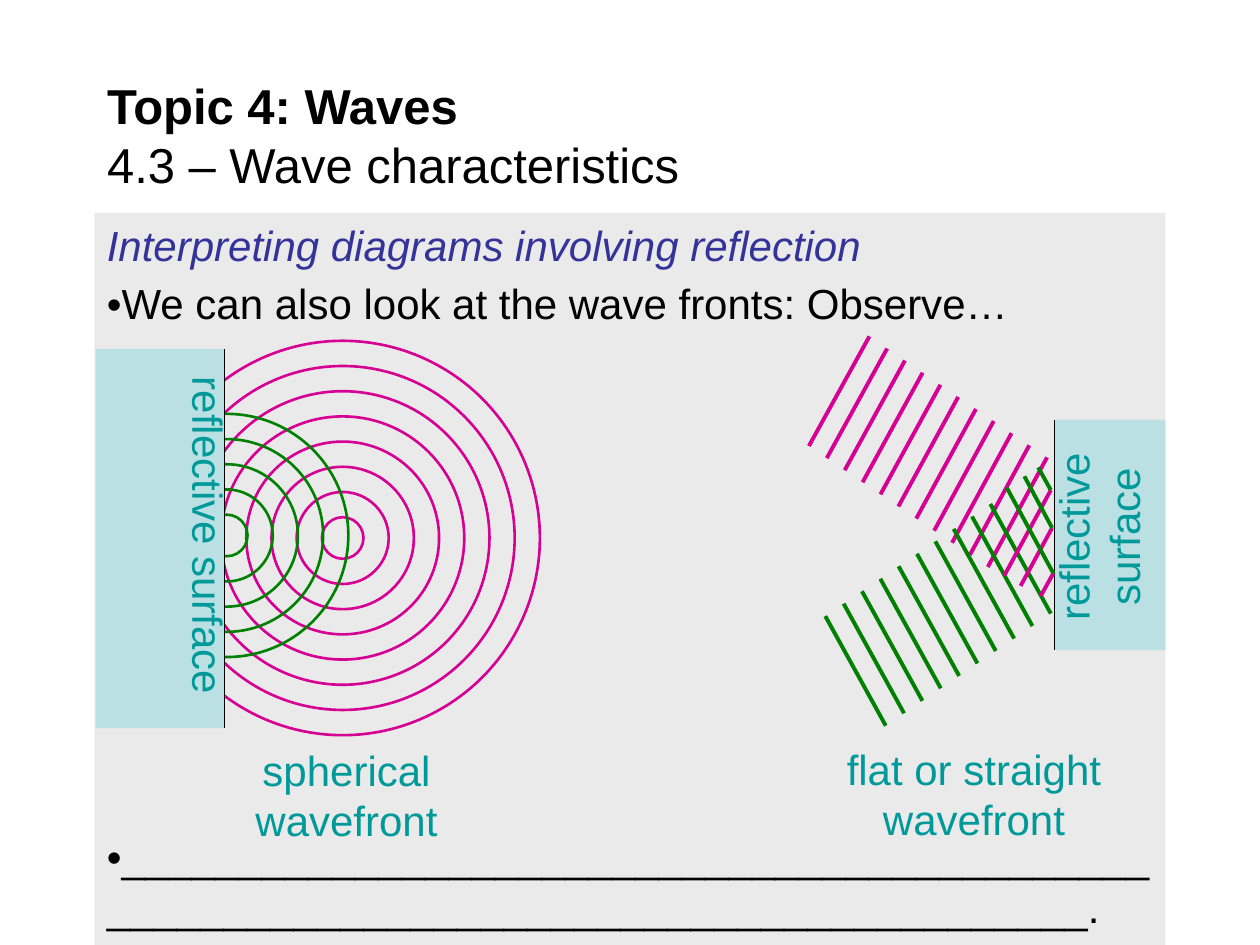
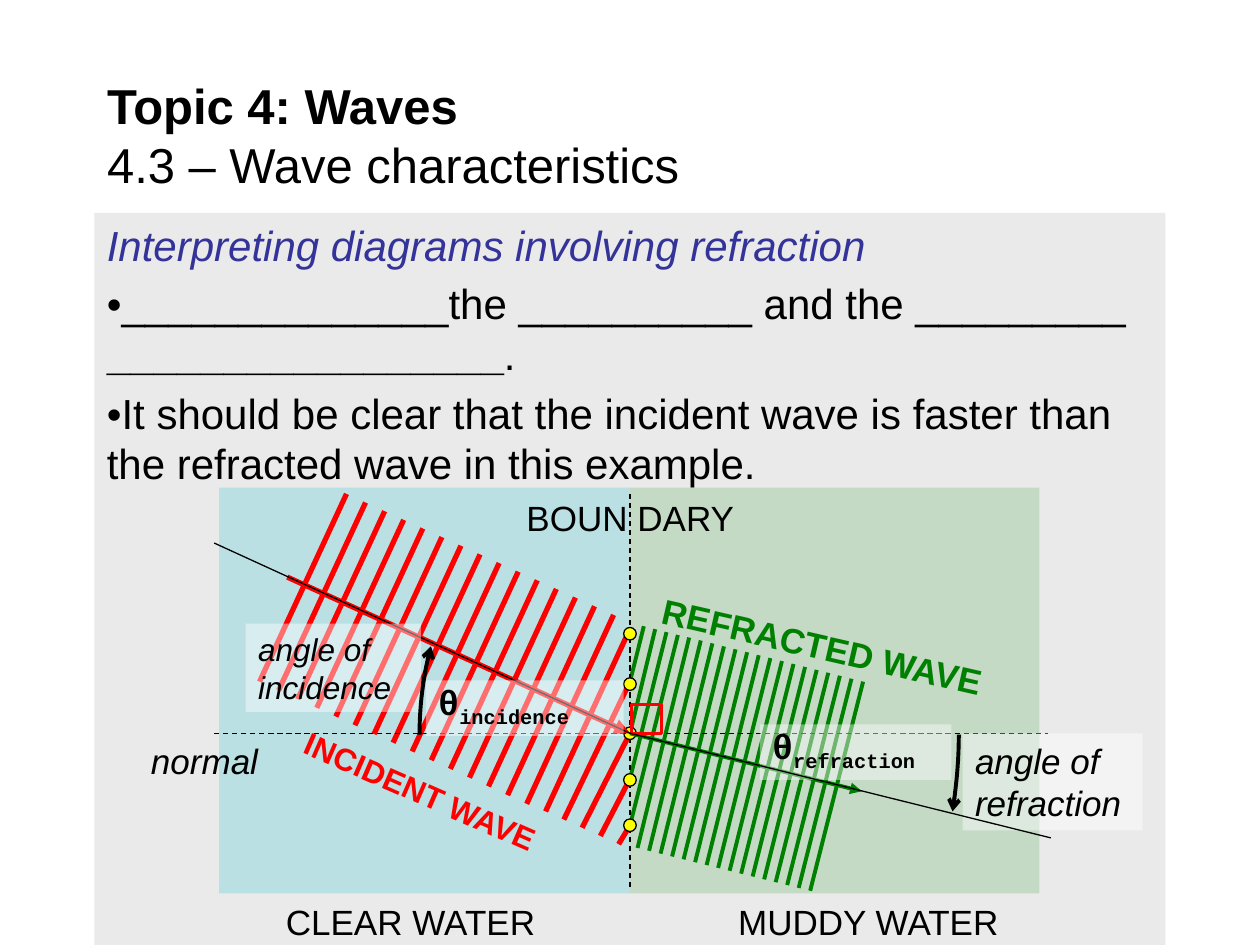
from dataclasses import dataclass, replace

from lxml import etree
from pptx import Presentation
from pptx.dml.color import RGBColor
from pptx.enum.dml import MSO_LINE
from pptx.enum.shapes import MSO_CONNECTOR, MSO_SHAPE
from pptx.enum.text import MSO_ANCHOR, MSO_AUTO_SIZE, PP_ALIGN
from pptx.oxml.ns import qn
from pptx.util import Inches, Pt

WIDE, HIGH = Inches(10), Inches(7.5)
CELL = WIDE // 10  # the grid has 10 columns and 7.5 rows of square cells

BLACK = RGBColor(0, 0, 0)
WHITE = RGBColor(255, 255, 255)
GRAY = RGBColor(0xEA, 0xEA, 0xEA)
NAVY = RGBColor(0x33, 0x33, 0x99)
TEAL = RGBColor(0, 0x99, 0x99)
AQUA = RGBColor(0xBB, 0xE0, 0xE3)
SAGE = RGBColor(0xC4, 0xDA, 0xC5)
PINK = RGBColor(0xD6, 0, 0x93)
GREEN = RGBColor(0, 0x80, 0)
RED = RGBColor(255, 0, 0)
YELLOW = RGBColor(255, 255, 0)

Point = tuple[float, float]
Seg = tuple[Point, Point]
Box = tuple[float, float, float, float]

TITLE: Box = (0.75, 0.58, 8.5, 0.98)
PANEL: Box = (0.75, 1.69, 8.5, 5.81)
LEAD = 1.2
GAP = 4.8


@dataclass(frozen=True)
class Font:
    size: float = 24
    color: RGBColor = BLACK
    bold: bool = False
    italic: bool = False
    name: str = "Arial"
    base: int = 0


@dataclass(frozen=True)
class Pen:
    color: RGBColor = BLACK
    width: float = 0.75
    dash: bool = False
    arrow: bool = False


@dataclass(frozen=True)
class Para:
    spans: tuple[tuple[str, Font], ...]
    before: float = 0


@dataclass(frozen=True)
class Label:
    box: Box
    para: Para
    center: bool = False
    wrap: bool = True
    turn: float = 0
    veil: bool = False


PLAIN = Font()
HEAD = Font(color=NAVY, italic=True)
NOTE = Font(color=TEAL)
CAP = Font(20)
SLANT = Font(20, italic=True)
THETA = Font(20, bold=True, name="Courier New")
SUB = replace(THETA, base=-25)
THIN = Pen()
DASHED = Pen(dash=True)


def line_of(text: str, font: Font, before: float = 0) -> Para:
    return Para(((text, font),), before)


def grid(values) -> list[int]:
    return [round(v * CELL) for v in values]


def style(run, font: Font) -> None:
    face = run.font
    face.name, face.size = font.name, Pt(font.size)
    face.bold, face.italic = font.bold, font.italic
    face.color.rgb = font.color
    if font.base:
        run._r.get_or_add_rPr().set("baseline", str(font.base * 1000))


def write(frame, paras: list[Para], center: bool = False) -> None:
    for n, para in enumerate(paras):
        p = frame.add_paragraph() if n else frame.paragraphs[0]
        p.text = para.spans[0][0]
        for text, _ in para.spans[1:]:
            p.add_run().text = text
        for run, (_, font) in zip(p.runs, para.spans):
            style(run, font)
        p.alignment = PP_ALIGN.CENTER if center else PP_ALIGN.LEFT
        p.space_before = Pt(para.before)
        p.line_spacing = Pt(LEAD * para.spans[0][1].size)


def paint(shape, color: RGBColor, alpha: int = 100) -> None:
    shape.fill.solid()
    shape.fill.fore_color.rgb = color
    if alpha < 100:
        tone = shape.fill._xPr.find(qn("a:solidFill"))[0]
        etree.SubElement(tone, qn("a:alpha")).set("val", str(alpha * 1000))


def ink(shape, pen: Pen, end: str = "tailEnd", kind: str = "triangle") -> None:
    shape.line.color.rgb = pen.color
    shape.line.width = Pt(pen.width)
    if pen.dash:
        shape.line.dash_style = MSO_LINE.DASH
    if pen.arrow:
        tip = etree.SubElement(shape.line._get_or_add_ln(), qn(f"a:{end}"))
        tip.set("type", kind)


def figure(slide, kind, box: Box, fill: RGBColor | None = None,
           pen: Pen | None = None) -> None:
    shape = slide.shapes.add_shape(kind, *grid(box))
    shape.shadow.inherit = False
    if fill is None:
        shape.fill.background()
    else:
        paint(shape, fill)
    if pen is None:
        shape.line.fill.background()
    else:
        ink(shape, pen)


def disc(slide, mid: Point, size: float, pen: Pen,
         fill: RGBColor | None = None) -> None:
    box = (mid[0] - size / 2, mid[1] - size / 2, size, size)
    figure(slide, MSO_SHAPE.OVAL, box, fill, pen)


def stroke(slide, seg: Seg, pen: Pen) -> None:
    wire = slide.shapes.add_connector(
        MSO_CONNECTOR.STRAIGHT, *grid(seg[0] + seg[1]))
    ink(wire, pen)
    etree.SubElement(wire._element.spPr, qn("a:effectLst"))


def mix(a: Point, b: Point, t: float) -> Point:
    return a[0] + (b[0] - a[0]) * t, a[1] + (b[1] - a[1]) * t


def fan(slide, first: Seg, last: Seg, count: int, pen: Pen) -> None:
    """Draw evenly spaced wave fronts from the first to the last."""
    for n in range(count):
        t = n / (count - 1)
        stroke(slide, (mix(first[0], last[0], t), mix(first[1], last[1], t)), pen)


def sweep(slide, curve: tuple[Point, Point, Point, Point], pen: Pen) -> None:
    """Draw a cubic curve with an arrowhead at its first point."""
    steps = 24
    dots = []
    for n in range(steps + 1):
        t = n / steps
        rate = ((1 - t) ** 3, 3 * t * (1 - t) ** 2, 3 * t * t * (1 - t), t ** 3)
        dots.append(grid(sum(r * p[k] for r, p in zip(rate, curve))
                         for k in (0, 1)))
    build = slide.shapes.build_freeform(*dots[0], scale=1.0)
    build.add_line_segments(dots[1:], close=False)
    shape = build.convert_to_shape()
    shape.shadow.inherit = False
    shape.fill.background()
    ink(shape, pen, "headEnd", "arrow")


def tag(slide, label: Label) -> None:
    shape = slide.shapes.add_textbox(*grid(label.box))
    shape.rotation = label.turn
    shape.text_frame.word_wrap = label.wrap
    if label.veil:
        paint(shape, WHITE, 43)
    write(shape.text_frame, [label.para], label.center)


def start(deck, paras: list[Para]):
    """Add a slide with the shared title and gray text panel."""
    slide = deck.slides.add_slide(deck.slide_layouts[5])
    title = slide.shapes.title
    title.left, title.top, title.width, title.height = grid(TITLE)
    frame = title.text_frame
    frame.auto_size = MSO_AUTO_SIZE.NONE
    frame.vertical_anchor = MSO_ANCHOR.MIDDLE
    frame.text = "Topic 4: Waves\v4.3 – Wave characteristics"
    para = frame.paragraphs[0]
    para.alignment = PP_ALIGN.LEFT
    para.line_spacing = Pt(LEAD * 28)
    for run, bold in zip(para.runs, (True, False)):
        style(run, Font(28, bold=bold))
    panel = slide.shapes.add_textbox(*grid(PANEL))
    panel.text_frame.word_wrap = True
    paint(panel, GRAY)
    write(panel.text_frame, paras)
    return slide


def rings(slide, mid: Point, count: int, color: RGBColor) -> None:
    for n in range(count):
        disc(slide, mid, 0.33 + 0.4 * n, Pen(color, 1.5))


def mirror(slide, box: Box, edge: float, label: Label) -> None:
    figure(slide, MSO_SHAPE.RECTANGLE, box, AQUA)
    stroke(slide, ((edge, box[1]), (edge, box[1] + box[3])), THIN)
    tag(slide, label)


def reflect(deck) -> None:
    slide = start(deck, [
        line_of("Interpreting diagrams involving reflection", HEAD),
        line_of("•We can also look at the wave fronts: Observe…", PLAIN, GAP),
        line_of("•" + "_" * 86 + ".", PLAIN, 287),
    ])
    name = line_of("reflective surface", NOTE)
    mirror(slide, (8.37, 3.33, 0.88, 1.83), 8.37,
           Label((7.72, 3.81, 1.99, 0.9), name, center=True, turn=270))
    pink, green = Pen(PINK, 2.25), Pen(GREEN, 2.25)
    fan(slide, ((6.9, 2.67), (6.42, 3.54)), ((8.31, 3.63), (7.84, 4.5)), 11, pink)
    fan(slide, ((6.55, 4.89), (7.03, 5.76)), ((7.86, 4), (8.34, 4.87)), 10, green)
    bends = (
        ((8.24, 3.71), (8.34, 3.89), (7.97, 4.57)),
        ((8.13, 3.78), (8.35, 4.19), (8.1, 4.65)),
        ((7.99, 3.87), (8.36, 4.55), (8.26, 4.73)),
    )
    for top, wall, foot in bends:
        stroke(slide, (wall, foot), pink)
        stroke(slide, (top, wall), green)
    rings(slide, (2.72, 4.27), 8, PINK)
    rings(slide, (1.8, 4.25), 5, GREEN)
    for text, box in (("spherical wavefront", (1.71, 5.86, 2.08, 0.9)),
                      ("flat or straight wavefront", (6.34, 5.85, 2.78, 0.9))):
        tag(slide, Label(box, line_of(text, NOTE), center=True))
    mirror(slide, (0.76, 2.77, 1.02, 3.01), 1.78,
           Label((0.02, 4, 3.28, 0.5), name, center=True, turn=90))


def refract(deck) -> None:
    slide = start(deck, [
        line_of("Interpreting diagrams involving refraction", HEAD),
        Para((("•" + "_" * 14 + "the " + "_" * 10 + " and the " + "_" * 9 + " ",
               PLAIN),
              ("_" * 17, Font(bold=True)), (".", PLAIN)), GAP),
        line_of("•It should be clear that the incident wave is faster than "
                "the refracted wave in this example.", PLAIN, GAP),
    ])
    for left, color in ((4.99, SAGE), (1.74, AQUA)):
        figure(slide, MSO_SHAPE.RECTANGLE, (left, 3.87, 3.26, 3.22), color)

    red, green = Pen(RED, 3), Pen(GREEN, 2.25)
    edge = 5
    hits = (4.99, 5.41, 5.82, 6.18, 6.55)
    fan(slide, ((2.75, 3.92), (2.06, 5.41)), ((4.87, 4.88), (4.18, 6.38)), 15, red)
    for n, y in enumerate(hits):
        foot = mix((4.33, 6.44), (4.91, 6.7), n / 4)
        stroke(slide, ((edge, y), foot), red)
    for n, y in enumerate(hits[1:]):
        top = mix((5.11, 4.97), (5.38, 5.04), n / 3)
        stroke(slide, (top, (edge, y)), green)
    fan(slide, ((5.47, 5.06), (5.06, 6.73)), ((6.85, 5.41), (6.43, 7.07)), 16, green)
    stroke(slide, ((edge, 3.92), (edge, 7.06)), DASHED)

    bold = Font(20, GREEN, bold=True)
    for label in (
        Label((2.17, 7.1, 2.21, 0.43), line_of("CLEAR WATER", CAP), wrap=False),
        Label((5.76, 7.1, 2.3, 0.43), line_of("MUDDY WATER", CAP), wrap=False),
        Label((4.08, 3.89, 1.87, 0.43), line_of("BOUN DARY", CAP)),
        Label((2.24, 6.14, 2.46, 0.4),
              line_of("INCIDENT WAVE", replace(bold, size=18, color=RED)),
              turn=23.7),
        Label((5.13, 4.92, 2.87, 0.43), line_of("REFRACTED WAVE", bold),
              turn=12.9),
    ):
        tag(slide, label)
    for y in (5.03, 5.43, 5.82, 6.19, 6.55):
        disc(slide, (edge, y), 0.1, THIN, YELLOW)

    hub = (edge, 5.82)
    stroke(slide, ((2.28, 4.58), hub), replace(red, arrow=True))
    stroke(slide, (hub, (6.84, 6.28)), replace(green, arrow=True))
    stroke(slide, ((1.7, 5.82), (8.32, 5.82)), DASHED)
    figure(slide, MSO_SHAPE.RECTANGLE, (5.01, 5.59, 0.24, 0.23), pen=Pen(RED, 1.5))
    tag(slide, Label((1.1, 5.82, 1.16, 0.43), line_of("normal", SLANT)))
    stroke(slide, (hub, (1.7, 4.31)), THIN)
    for box, para in (
        ((3.38, 5.4, 1.57, 0.44), Para((("θ", THETA), ("incidence", SUB)))),
        ((1.95, 4.95, 1.39, 0.7),
         line_of("angle of incidence", replace(SLANT, size=18))),
        ((6.03, 5.75, 1.52, 0.44), Para((("θ", THETA), ("refraction", SUB)))),
        ((7.64, 5.82, 1.43, 0.77), line_of("angle of refraction", SLANT)),
    ):
        tag(slide, Label(box, para, veil=True))
    stroke(slide, ((8.34, 6.65), hub), THIN)
    for curve in (
        ((7.56, 6.44), (7.59, 6.24), (7.61, 6.04), (7.61, 5.83)),
        ((3.42, 5.13), (3.36, 5.36), (3.33, 5.59), (3.33, 5.83)),
    ):
        sweep(slide, curve, Pen(width=2.25, arrow=True))


def main() -> None:
    deck = Presentation()
    deck.slide_width, deck.slide_height = WIDE, HIGH
    reflect(deck)
    refract(deck)
    deck.save("out.pptx")


if __name__ == "__main__":
    main()
